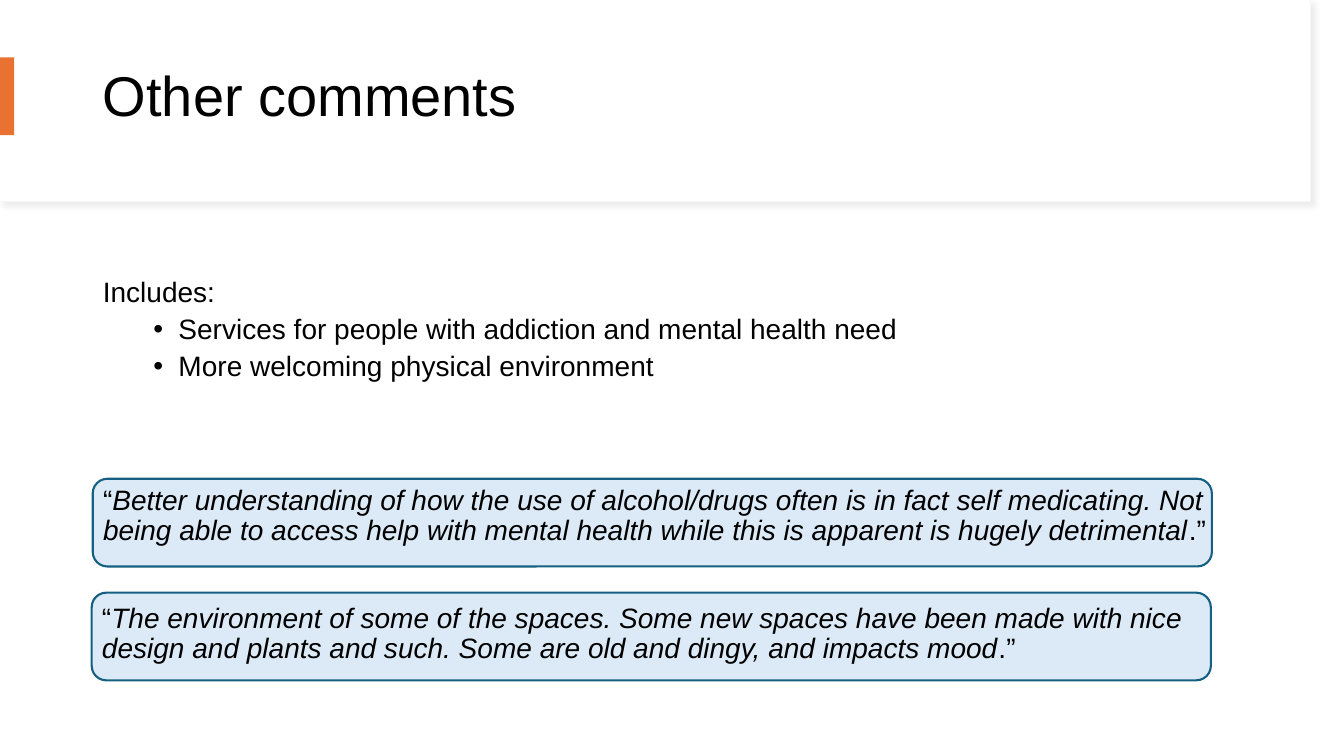
from dataclasses import dataclass

from lxml.etree import SubElement
from pptx import Presentation
from pptx.dml.color import RGBColor
from pptx.enum.shapes import MSO_SHAPE
from pptx.enum.text import MSO_ANCHOR, MSO_AUTO_SIZE, PP_ALIGN
from pptx.oxml.ns import qn
from pptx.shapes.autoshape import Shape
from pptx.slide import Slide
from pptx.text.text import _Paragraph as Paragraph
from pptx.util import Inches, Pt

COLOURS = {
    "text": "000000",
    "white": "FFFFFF",
    "edge": "E6E6E6",
    "shadow": "D9D9D9",
    "accent": "E97132",
    "quote fill": "DCEAF7",
    "quote line": "156082",
}
FONT = "Arial"
PAGE_WIDTH = 13.33
CURVE_STEPS = 24


@dataclass
class Quote:
    left: float
    top: float
    inset_top: float
    words: str


QUOTES = [
    Quote(0.92, 4.75, 0.03,
          "Better understanding of how the use of alcohol/drugs often is in fact "
          "self medicating. Not being able to access help with mental health while "
          "this is apparent is hugely detrimental"),
    Quote(0.91, 5.88, 0.07,
          "The environment of some of the spaces. Some new spaces have been made "
          "with nice design and plants and such. Some are old and dingy, and "
          "impacts mood"),
]
BULLETS = [
    "Services for people with addiction and mental health need",
    "More welcoming physical environment",
]


def colour(name: str) -> RGBColor:
    return RGBColor.from_string(COLOURS[name])


def paint(shape: Shape, fill: str, line: str | None = None, width: float = 0) -> None:
    shape.shadow.inherit = False
    shape.fill.solid()
    shape.fill.fore_color.rgb = colour(fill)
    if line:
        shape.line.color.rgb = colour(line)
        shape.line.width = Pt(width)
    else:
        shape.line.fill.background()


def format_paragraph(paragraph: Paragraph, size: float, before: float = 0) -> None:
    paragraph.alignment = PP_ALIGN.LEFT
    paragraph.line_spacing = 0.9
    paragraph.space_before = Pt(before)
    paragraph.font.size = Pt(size)
    paragraph.font.name = FONT
    paragraph.font.color.rgb = colour("text")


def set_bullet(paragraph: Paragraph, symbol: str | None) -> None:
    properties = paragraph._p.get_or_add_pPr()
    left, indent = (0.75, -0.25) if symbol else (0, 0)
    properties.set("marL", str(Inches(left)))
    properties.set("indent", str(Inches(indent)))
    if symbol:
        SubElement(properties, qn("a:buFont"), typeface=FONT)
        SubElement(properties, qn("a:buChar"), char=symbol)
    else:
        SubElement(properties, qn("a:buNone"))


def add_header_curve(page: Slide, depth: float) -> Shape:
    """Draw a full-width panel whose lower edge sags to the given depth."""
    middle, shoulder = PAGE_WIDTH / 2, 0.91
    side, shoulder_height = depth - 0.29, depth - 0.21
    start = (PAGE_WIDTH - shoulder, shoulder_height)
    controls = [start, (10.65, depth - 0.08), (8.71, depth), (middle, depth)]
    right_half = []
    for step in range(CURVE_STEPS + 1):
        t = step / CURVE_STEPS
        weights = [(1 - t) ** 3, 3 * t * (1 - t) ** 2, 3 * t ** 2 * (1 - t), t ** 3]
        right_half.append(tuple(
            sum(weight * point[axis] for weight, point in zip(weights, controls))
            for axis in (0, 1)))
    left_half = [(PAGE_WIDTH - x, y) for x, y in reversed(right_half[:-1])]
    outline = [(PAGE_WIDTH, 0), (PAGE_WIDTH, side), *right_half, *left_half, (0, side)]
    builder = page.shapes.build_freeform(0, 0, scale=Inches(1))
    builder.add_line_segments(outline, close=True)
    return builder.convert_to_shape()


def add_soft_shadow(shape: Shape) -> None:
    effects = shape._element.spPr.find(qn("a:effectLst"))
    shadow = SubElement(effects, qn("a:outerShdw"), blurRad=str(Pt(4)),
                        dist=str(Pt(3)), dir=str(45 * 60000), algn="tl")
    tint = SubElement(shadow, qn("a:srgbClr"), val=COLOURS["shadow"])
    SubElement(tint, qn("a:alpha"), val="50000")


def add_quote(page: Slide, quote: Quote) -> None:
    box = page.shapes.add_shape(MSO_SHAPE.ROUNDED_RECTANGLE, Inches(quote.left),
                                Inches(quote.top), Inches(11.1), Inches(0.87))
    paint(box, "quote fill", "quote line", 1.5)
    frame = box.text_frame
    frame.word_wrap = True
    frame.vertical_anchor = MSO_ANCHOR.TOP
    frame.margin_left, frame.margin_right = Inches(0.06), 0
    frame.margin_top, frame.margin_bottom = Inches(quote.inset_top), 0
    paragraph = frame.paragraphs[0]
    format_paragraph(paragraph, 20)
    for words, italic in (("“", False), (quote.words, True), (".”", False)):
        span = paragraph.add_run()
        span.text = words
        span.font.italic = italic


def fill_title(title: Shape) -> None:
    title.left, title.top = Inches(0.92), Inches(0.28)
    title.width, title.height = Inches(11.5), Inches(1.39)
    title.text_frame.text = "Other comments"
    title.text_frame.vertical_anchor = MSO_ANCHOR.MIDDLE
    title.text_frame.auto_size = MSO_AUTO_SIZE.NONE
    format_paragraph(title.text_frame.paragraphs[0], 40)


def fill_body(body: Shape) -> None:
    body.left, body.top = Inches(0.92), Inches(2.71)
    body.width, body.height = Inches(11.5), Inches(1.5)
    frame = body.text_frame
    frame.auto_size = MSO_AUTO_SIZE.NONE
    frame.text = "Includes:"
    set_bullet(frame.paragraphs[0], None)
    format_paragraph(frame.paragraphs[0], 20)
    for words in BULLETS:
        paragraph = frame.add_paragraph()
        paragraph.text = words
        paragraph.level = 1
        set_bullet(paragraph, "•")
        format_paragraph(paragraph, 20, before=5)


def main() -> None:
    deck = Presentation()
    deck.slide_width, deck.slide_height = Inches(PAGE_WIDTH), Inches(7.5)
    page = deck.slides.add_slide(deck.slide_layouts[1])
    title, body = page.placeholders

    edge = add_header_curve(page, 2.08)
    paint(edge, "white", "edge", 0.75)
    add_soft_shadow(edge)
    paint(add_header_curve(page, 2.07), "white")

    marker = page.shapes.add_shape(MSO_SHAPE.RECTANGLE, 0, Inches(0.57),
                                   Inches(0.14), Inches(0.77))
    paint(marker, "accent")
    fill_title(title)
    fill_body(body)
    for placeholder in (title, body):
        page.shapes._spTree.append(placeholder._element)
    for quote in QUOTES:
        add_quote(page, quote)
    deck.save("out.pptx")


if __name__ == "__main__":
    main()
